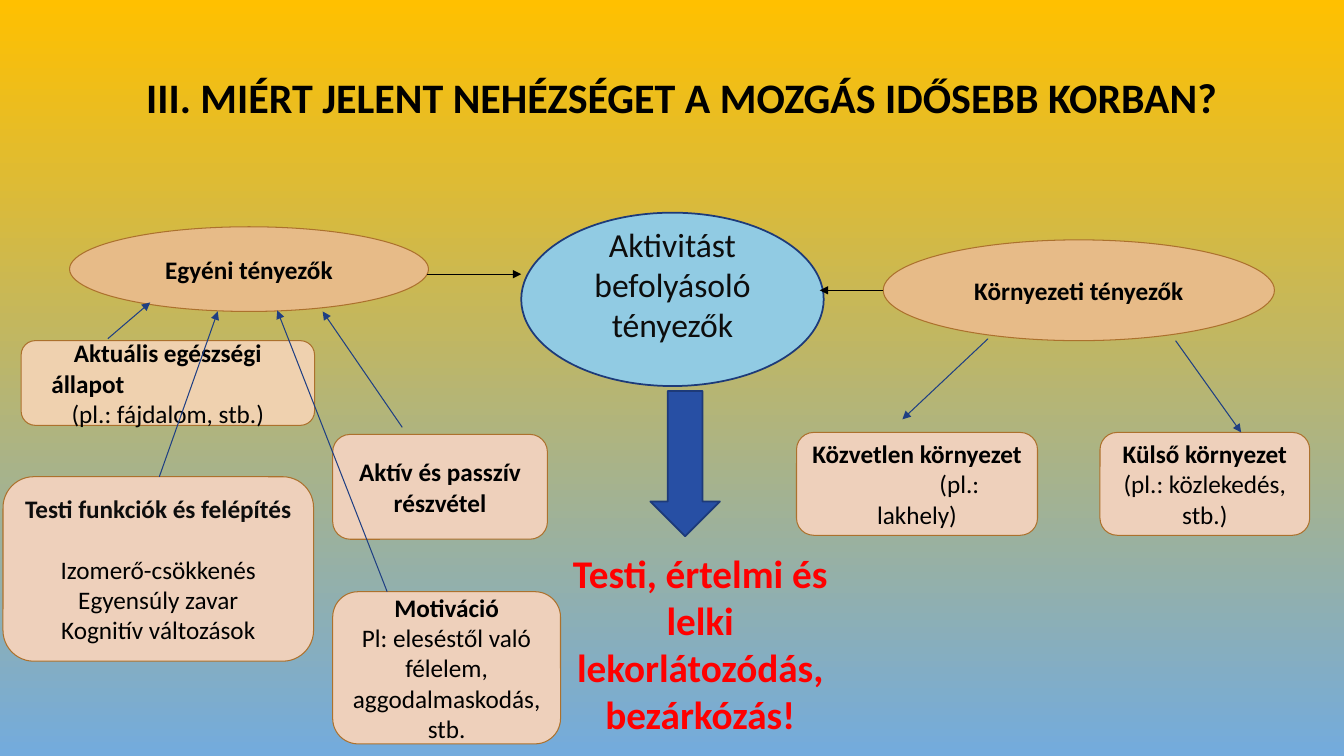
from dataclasses import dataclass
from typing import Optional

from pptx import Presentation
from pptx.dml.color import RGBColor
from pptx.enum.shapes import MSO_CONNECTOR, MSO_SHAPE
from pptx.enum.text import MSO_ANCHOR, PP_ALIGN
from pptx.oxml.ns import qn
from pptx.util import Emu, Pt

PX = 9144  # 100 px to the inch
ROUND, OVAL = MSO_SHAPE.ROUNDED_RECTANGLE, MSO_SHAPE.OVAL
HUB, DOWN = MSO_SHAPE.FLOWCHART_CONNECTOR, MSO_SHAPE.DOWN_ARROW
CENTER, LEFT = PP_ALIGN.CENTER, PP_ALIGN.LEFT
MIDDLE, TOP = MSO_ANCHOR.MIDDLE, MSO_ANCHOR.TOP
STRAIGHT = MSO_CONNECTOR.STRAIGHT

BLACK = RGBColor(0x00, 0x00, 0x00)
NEAR_BLACK = RGBColor(0x0D, 0x0D, 0x0D)
RED = RGBColor(0xFF, 0x00, 0x00)
GOLD = RGBColor(0xFF, 0xC0, 0x00)
SKY = RGBColor(0x73, 0xAB, 0xDD)
PEACH = RGBColor(0xEE, 0xD0, 0xBB)
SAND = RGBColor(0xEF, 0xD1, 0xAF)
TAN = RGBColor(0xE7, 0xBB, 0x88)
BROWN = RGBColor(0xAC, 0x71, 0x2D)
PALE_BLUE = RGBColor(0x91, 0xCB, 0xE3)
BLUE = RGBColor(0x27, 0x4F, 0xA4)
NAVY = RGBColor(0x1D, 0x3A, 0x79)
ARROW_BLUE = RGBColor(0x1F, 0x3F, 0x83)


@dataclass
class Para:
    text: str
    bold: bool = False
    size: int = 18
    color: RGBColor = BLACK
    align: PP_ALIGN = CENTER
    indent: int = 0
    before: int = 0


@dataclass
class Node:
    box: tuple[int, int, int, int]
    paras: list[Para]
    kind: MSO_SHAPE = ROUND
    fill: RGBColor = PEACH
    line: RGBColor = BROWN
    weight: float = 0.75
    bottom: int = 5


@dataclass
class Arrow:
    start: tuple[int, int]
    end: tuple[int, int]
    color: RGBColor = ARROW_BLUE


@dataclass
class Label:
    box: tuple[int, int, int, int]
    para: Para


LABELS = [
    Label((123, 66, 1107, 111),
          Para("III. MIÉRT JELENT NEHÉZSÉGET A MOZGÁS IDŐSEBB KORBAN?", True, 30)),
    Label((556, 540, 277, 199),
          Para("Testi, értelmi és lelki lekorlátozódás,bezárkózás!", True, 28, RED)),
]

NODES = [
    Node((330, 587, 226, 151), [
        Para("Motiváció", True),
        Para("Pl: eleséstől való félelem, aggodalmaskodás, stb.")]),
    Node((330, 431, 213, 104), [Para("Aktív és passzív részvétel", True)]),
    Node((69, 225, 356, 84), [Para("Egyéni tényezők", True)], OVAL, TAN),
    Node((876, 238, 388, 100), [Para("Környezeti tényezők", True)], OVAL, TAN),
    Node((3, 473, 308, 183), [
        Para("Testi funkciók és felépítés", True, color=NEAR_BLACK),
        Para("Izomerő-csökkenés", before=22),
        Para("Egyensúly zavar"),
        Para("Kognitív változások")]),
    Node((21, 338, 291, 84), [
        Para("Aktuális egészségi", True),
        Para("állapot", True, align=LEFT, indent=16),
        Para("(pl.: fájdalom, stb.)")], fill=SAND),
    Node((517, 211, 300, 172),
         [Para("Aktivitást befolyásoló tényezők", size=24, color=NEAR_BLACK)],
         HUB, PALE_BLUE, NAVY, 1.25, bottom=35),
    Node((790, 429, 239, 102), [
        Para("Közvetlen környezet", True),
        Para("(pl.:", indent=84),
        Para("lakhely)")]),
    Node((1091, 429, 208, 102), [
        Para("Külső környezet", True),
        Para("(pl.: közlekedés, stb.)")]),
    Node((645, 388, 69, 144), [], DOWN, BLUE, NAVY, 1.25),
]

ARROWS = [
    Arrow((1166, 338), (1231, 429)),
    Arrow((980, 336), (895, 416)),
    Arrow((876, 288), (813, 288), BLACK),
    Arrow((424, 272), (517, 272), BLACK),
    Arrow((107, 336), (149, 300)),
    Arrow((158, 473), (216, 309)),
    Arrow((399, 424), (320, 309)),
    Arrow((384, 587), (275, 308)),
]


def px(*values: int) -> list[Emu]:
    return [Emu(v * PX) for v in values]


def write(tf, paras: list[Para], anchor: MSO_ANCHOR) -> None:
    tf.word_wrap = True
    tf.vertical_anchor = anchor
    for i, para in enumerate(paras):
        p = tf.paragraphs[0] if i == 0 else tf.add_paragraph()
        p.alignment = para.align
        if para.indent:
            p._p.get_or_add_pPr().set("marL", str(para.indent * PX))
        if para.before:
            p.space_before = Pt(para.before)
        r = p.add_run()
        r.text = para.text
        r.font.color.rgb = para.color
        font = {"name": "Calibri", "size": Pt(para.size), "bold": para.bold}
        for name, value in font.items():
            setattr(r.font, name, value)


def draw_label(s, label: Label) -> None:
    write(s.shapes.add_textbox(*px(*label.box)).text_frame, [label.para], TOP)


def draw_node(s, node: Node) -> None:
    sp = s.shapes.add_shape(node.kind, *px(*node.box))
    sp.shadow.inherit = False
    sp.fill.solid()
    sp.fill.fore_color.rgb = node.fill
    sp.line.color.rgb = node.line
    sp.line.width = Pt(node.weight)
    sp.text_frame.margin_bottom = Emu(node.bottom * PX)
    write(sp.text_frame, node.paras, MIDDLE)


def draw_arrow(s, arrow: Arrow) -> None:
    c = s.shapes.add_connector(STRAIGHT, *px(*arrow.start, *arrow.end))
    c.line.color.rgb = arrow.color
    c.line.width = Pt(0.75)
    spPr = c._element.spPr
    ln = spPr.find(qn("a:ln"))
    ln.append(ln.makeelement(qn("a:tailEnd"), {"type": "triangle"}))
    spPr.append(spPr.makeelement(qn("a:effectLst"), {}))


def main() -> None:
    prs = Presentation()
    prs.slide_width, prs.slide_height = px(1333, 750)
    s = prs.slides.add_slide(prs.slide_layouts[6])

    # Background, gold at the top to blue at the bottom
    bg = s.background.fill
    bg.gradient()
    bg.gradient_angle = 270
    for stop, position, color in zip(bg.gradient_stops, (0, 1), (GOLD, SKY)):
        stop.position = position
        stop.color.rgb = color

    # Title and conclusion, factors, then the links between them
    for label in LABELS:
        draw_label(s, label)
    for node in NODES:
        draw_node(s, node)
    for arrow in ARROWS:
        draw_arrow(s, arrow)

    prs.save("out.pptx")


if __name__ == "__main__":
    main()
